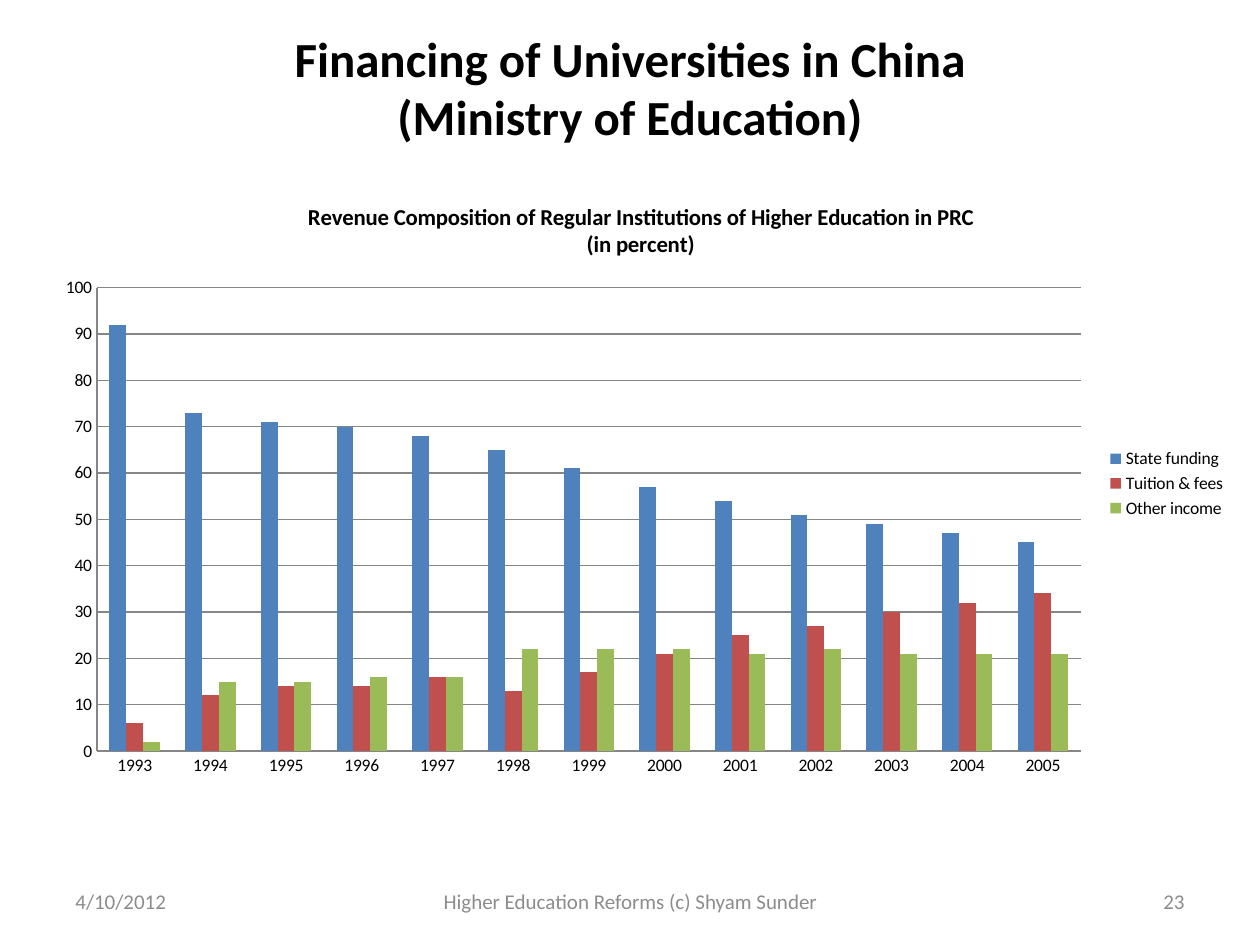
import pptx
import pptx.chart.data
import pptx.dml.color
import pptx.enum.chart
import pptx.enum.text
import pptx.util
from dataclasses import dataclass

EMU_PER_PX = 914400 / 126
ALIGN = pptx.enum.text.PP_ALIGN


@dataclass(frozen=True)
class Theme:
    font: str = "Calibri"
    ink: str = "000000"
    muted: str = "8C8C8C"
    grid: str = "868686"
    series: tuple = ("4F81BD", "C0504D", "9BBB59")
    heading_size: int = 28
    chart_title_size: int = 13
    chart_size: int = 10
    footer_size: int = 12


THEME = Theme()

YEARS = [str(year) for year in range(1993, 2006)]
REVENUE = {
    "State funding": (92, 73, 71, 70, 68, 65, 61, 57, 54, 51, 49, 47, 45),
    "Tuition & fees": (6, 12, 14, 14, 16, 13, 17, 21, 25, 27, 30, 32, 34),
    "Other income": (2, 15, 15, 16, 16, 22, 22, 22, 21, 22, 21, 21, 21),
}


def px(length):
    return pptx.util.Emu(round(length * EMU_PER_PX))


def rgb(color):
    return pptx.dml.color.RGBColor.from_string(color)


def style_font(font, size, color, bold=False):
    font.name = THEME.font
    font.size = pptx.util.Pt(size)
    font.bold = bold
    font.color.rgb = rgb(color)


def add_label(slide, box, lines, align, size, color, bold=False):
    """Vertically centred text, one paragraph with line breaks."""
    frame = slide.shapes.add_textbox(*map(px, box)).text_frame
    frame.word_wrap = True
    frame.vertical_anchor = pptx.enum.text.MSO_ANCHOR.MIDDLE
    paragraph = frame.paragraphs[0]
    paragraph.alignment = align
    style_font(paragraph.font, size, color, bold)
    for index, line in enumerate(lines):
        if index:
            paragraph.add_line_break()
        paragraph.add_run().text = line


def style_axis(axis):
    axis.major_tick_mark = pptx.enum.chart.XL_TICK_MARK.NONE
    axis.minor_tick_mark = pptx.enum.chart.XL_TICK_MARK.NONE
    axis.format.line.color.rgb = rgb(THEME.grid)
    axis.format.line.width = pptx.util.Pt(0.75)


def add_revenue_chart(slide, box):
    revenue = pptx.chart.data.CategoryChartData(number_format="0")
    revenue.categories = YEARS
    for name, shares in REVENUE.items():
        revenue.add_series(name, shares)
    chart = slide.shapes.add_chart(
        pptx.enum.chart.XL_CHART_TYPE.COLUMN_CLUSTERED, *map(px, box), revenue
    ).chart
    style_font(chart.font, THEME.chart_size, THEME.ink)

    # Chart title
    chart.has_title = True
    heading = chart.chart_title.text_frame
    heading.text = ("Revenue Composition of Regular Institutions of Higher Education in PRC\n"
                    "(in percent)")
    for paragraph in heading.paragraphs:
        style_font(paragraph.font, THEME.chart_title_size, THEME.ink, bold=True)
    chart.chart_title.include_in_layout = False

    # Legend
    chart.has_legend = True
    chart.legend.position = pptx.enum.chart.XL_LEGEND_POSITION.RIGHT
    chart.legend.include_in_layout = False

    # Axes and gridlines
    style_axis(chart.category_axis)
    percent = chart.value_axis
    style_axis(percent)
    percent.minimum_scale, percent.maximum_scale, percent.major_unit = 0, 100, 10
    percent.has_major_gridlines = True
    percent.major_gridlines.format.line.color.rgb = rgb(THEME.grid)
    percent.major_gridlines.format.line.width = pptx.util.Pt(0.75)

    # Columns
    columns = chart.plots[0]
    columns.vary_by_categories = False
    columns.gap_width = 150
    columns.overlap = 0
    for source, color in zip(columns.series, THEME.series):
        source.format.fill.solid()
        source.format.fill.fore_color.rgb = rgb(color)


def add_footer(slide):
    for left, width, text, align in (
        (63, 294, "4/10/2012", ALIGN.LEFT),
        (431, 399, "Higher Education Reforms (c) Shyam Sunder", ALIGN.CENTER),
        (903, 294, "23", ALIGN.RIGHT),
    ):
        add_label(slide, (left, 876, width, 50), [text], align,
                  THEME.footer_size, THEME.muted)


def main():
    deck = pptx.Presentation()
    deck.slide_width, deck.slide_height = px(1260), px(945)
    slide = deck.slides.add_slide(deck.slide_layouts[6])
    add_label(slide, (63, 38, 1134, 98),
              ["Financing of Universities in China", "(Ministry of Education)"],
              ALIGN.CENTER, THEME.heading_size, THEME.ink, bold=True)
    add_revenue_chart(slide, (42, 179, 1197, 609))
    add_footer(slide)
    deck.save("out.pptx")


if __name__ == "__main__":
    main()
